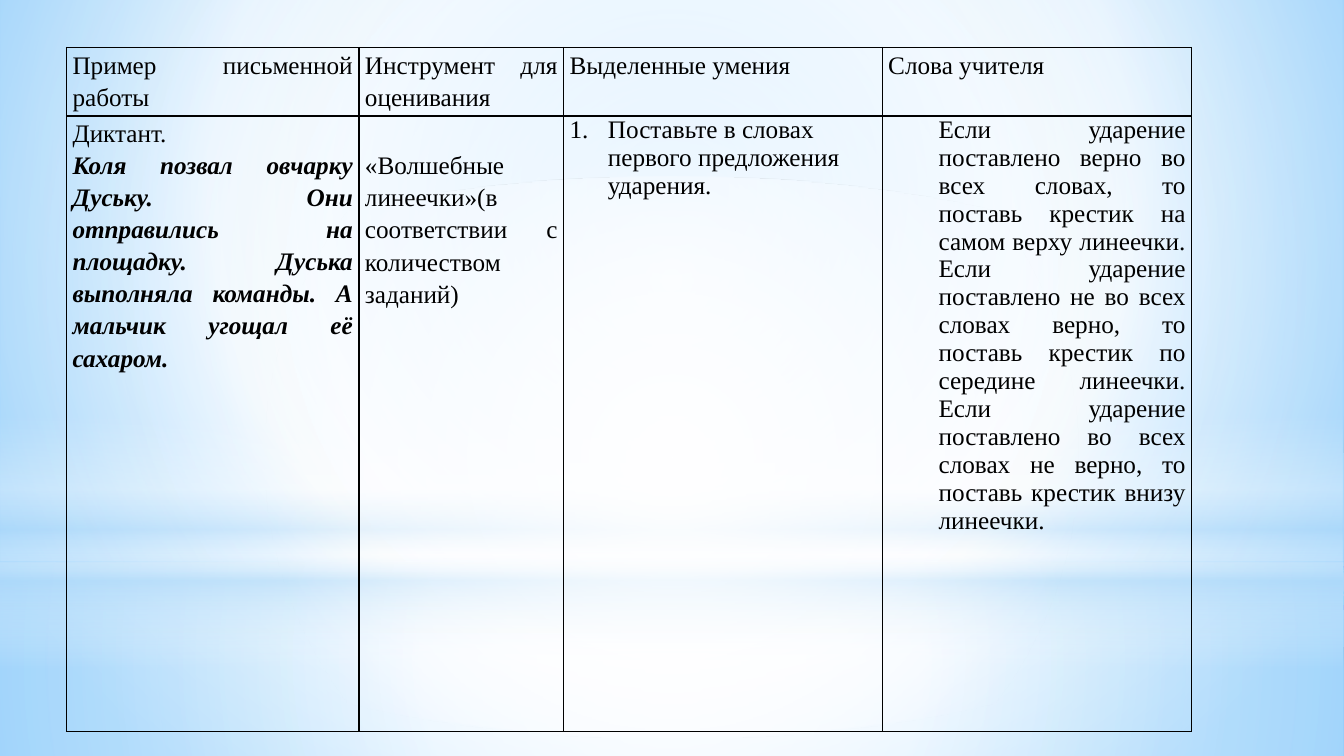
from dataclasses import dataclass

from lxml.etree import SubElement
from pptx import Presentation
from pptx.dml.color import RGBColor as Rgb
from pptx.enum.shapes import MSO_SHAPE as Shape
from pptx.enum.text import PP_ALIGN as Align
from pptx.oxml.ns import qn
from pptx.util import Inches, Pt


@dataclass(frozen=True)
class Theme:
    font: str = "Times New Roman"
    size: float = 18
    ink: str = "000000"
    border: float = 1
    white: str = "FFFFFF"
    haze: str = "B4DCFA"
    sky: str = "9ED5FF"
    deep_sky: str = "5BB9FF"


THEME = Theme()
WIDTH, HEIGHT = 13.33, 7.5
HORIZON = 5.58
CENTER = (50, 50, 50, 50)

TABLE_BOX = (0.66, 0.47)
COLUMNS = (2.9, 2.03, 3.16, 3.07)
ROWS = (0.68, 6.11)
LINE = 0.32  # height of one line at 1.15 spacing

HEADINGS = ("Пример письменной работы", "Инструмент для оценивания",
            "Выделенные умения", "Слова учителя")
DICTATION = ("Коля позвал овчарку Дуську. Они отправились на площадку. "
             "Дуська выполняла команды. А мальчик угощал её сахаром.")
TOOL = "«Волшебные линеечки»(в соответствии с количеством заданий)"
SKILL = "Поставьте в словах первого предложения ударения."
TEACHER = ("Если ударение поставлено верно во всех словах, то поставь крестик "
           "на самом верху линеечки. Если ударение поставлено не во всех "
           "словах верно, то поставь крестик по середине линеечки. Если "
           "ударение поставлено во всех словах не верно, то поставь крестик "
           "внизу линеечки.")


def paint_gradient(owner, fill, stops, focus=None):
    """Stops are (position, colour, opacity) in percent; without focus it runs down."""
    fill.gradient()
    gradient = owner.element.find(".//" + qn("a:gradFill"))
    for child in list(gradient):
        gradient.remove(child)
    stop_list = SubElement(gradient, qn("a:gsLst"))
    for position, colour, opacity in stops:
        stop = SubElement(stop_list, qn("a:gs"), pos=str(position * 1000))
        tint = SubElement(stop, qn("a:srgbClr"), val=colour)
        if opacity < 100:
            SubElement(tint, qn("a:alpha"), val=str(opacity * 1000))
    if focus:
        circle = SubElement(gradient, qn("a:path"), path="circle")
        sides = {side: str(share * 1000) for side, share in zip("ltrb", focus)}
        SubElement(circle, qn("a:fillToRect"), **sides)
    else:
        SubElement(gradient, qn("a:lin"), ang="5400000", scaled="0")


def add_glow(page, box, stops, focus=None, kind=Shape.RECTANGLE):
    glow = page.shapes.add_shape(kind, *map(Inches, box))
    glow.shadow.inherit = False
    glow.line.fill.background()
    paint_gradient(glow, glow.fill, stops, focus)


def draw_backdrop(page):
    white, haze = THEME.white, THEME.haze
    paint_gradient(page, page.background.fill,
                   [(0, THEME.sky, 100), (60, white, 100), (100, THEME.deep_sky, 100)],
                   (20, 10, 20, 60))
    # Ground and sky
    add_glow(page, (0, HORIZON, WIDTH, HEIGHT - HORIZON),
             [(0, white, 91), (37, white, 76), (100, haze, 79)], CENTER)
    add_glow(page, (0, 0, WIDTH, HORIZON),
             [(0, white, 89), (48, white, 62), (100, haze, 79)], CENTER)
    # Bright band along the horizon
    add_glow(page, (0, 4.12, WIDTH, 2.5),
             [(0, white, 0), (29, white, 30), (45, haze, 40),
              (55, white, 26), (65, haze, 60), (100, white, 0)])
    # Central light
    add_glow(page, (0, 1.75, WIDTH, HORIZON),
             [(0, white, 100), (56, white, 0)], CENTER, Shape.OVAL)


def write(para, text, align=Align.JUSTIFY, spacing=1.15, strong=False,
          indent=0, numbered=False):
    para.alignment = align
    para.line_spacing = spacing
    properties = para._p.get_or_add_pPr()
    properties.set("marL", str(Inches(indent)))
    properties.set("indent", str(-Inches(indent) if numbered else 0))
    if numbered:
        SubElement(properties, qn("a:buFont"), typeface="+mj-lt")
        SubElement(properties, qn("a:buAutoNum"), type="arabicPeriod")
    span = para.add_run()
    span.text = text
    span.font.name = THEME.font
    span.font.size = Pt(THEME.size)
    span.font.color.rgb = Rgb.from_string(THEME.ink)
    span.font.bold = span.font.italic = strong


def format_cell(cell):
    cell.margin_left = cell.margin_right = Inches(0.06)
    cell.margin_top = cell.margin_bottom = 0
    properties = cell._tc.get_or_add_tcPr()
    for side in ("a:lnL", "a:lnR", "a:lnT", "a:lnB"):
        line = SubElement(properties, qn(side), w=str(Pt(THEME.border)))
        paint = SubElement(line, qn("a:solidFill"))
        SubElement(paint, qn("a:srgbClr"), val=THEME.ink)
    cell.fill.background()


def draw_assessment_table(page, box):
    left, top = box
    frame = page.shapes.add_table(
        len(ROWS), len(COLUMNS), Inches(left), Inches(top),
        Inches(sum(COLUMNS)), Inches(sum(ROWS)))
    table = frame.table
    table.first_row = table.horz_banding = False
    for column, width in zip(table.columns, COLUMNS):
        column.width = Inches(width)
    for row, height in zip(table.rows, ROWS):
        row.height = Inches(height)
    for cell in table.iter_cells():
        format_cell(cell)

    # Headings
    for index, heading in enumerate(HEADINGS):
        write(table.cell(0, index).text_frame.paragraphs[0], heading)

    # Dictation, tool, skill and the teacher's words
    cells = [table.cell(1, index) for index in range(len(COLUMNS))]
    dictation, tool, skill, teacher = [cell.text_frame for cell in cells]
    write(dictation.paragraphs[0], "Диктант.")
    write(dictation.add_paragraph(), DICTATION, strong=True)
    cells[1].margin_top = Inches(LINE)
    write(tool.paragraphs[0], TOOL)
    write(skill.paragraphs[0], SKILL, align=Align.LEFT, spacing=1,
          indent=0.38, numbered=True)
    write(teacher.paragraphs[0], TEACHER, spacing=1, indent=0.5)


def main():
    deck = Presentation()
    deck.slide_width, deck.slide_height = Inches(WIDTH), Inches(HEIGHT)
    page = deck.slides.add_slide(deck.slide_layouts[6])
    draw_backdrop(page)
    draw_assessment_table(page, TABLE_BOX)
    deck.save("out.pptx")


if __name__ == "__main__":
    main()
